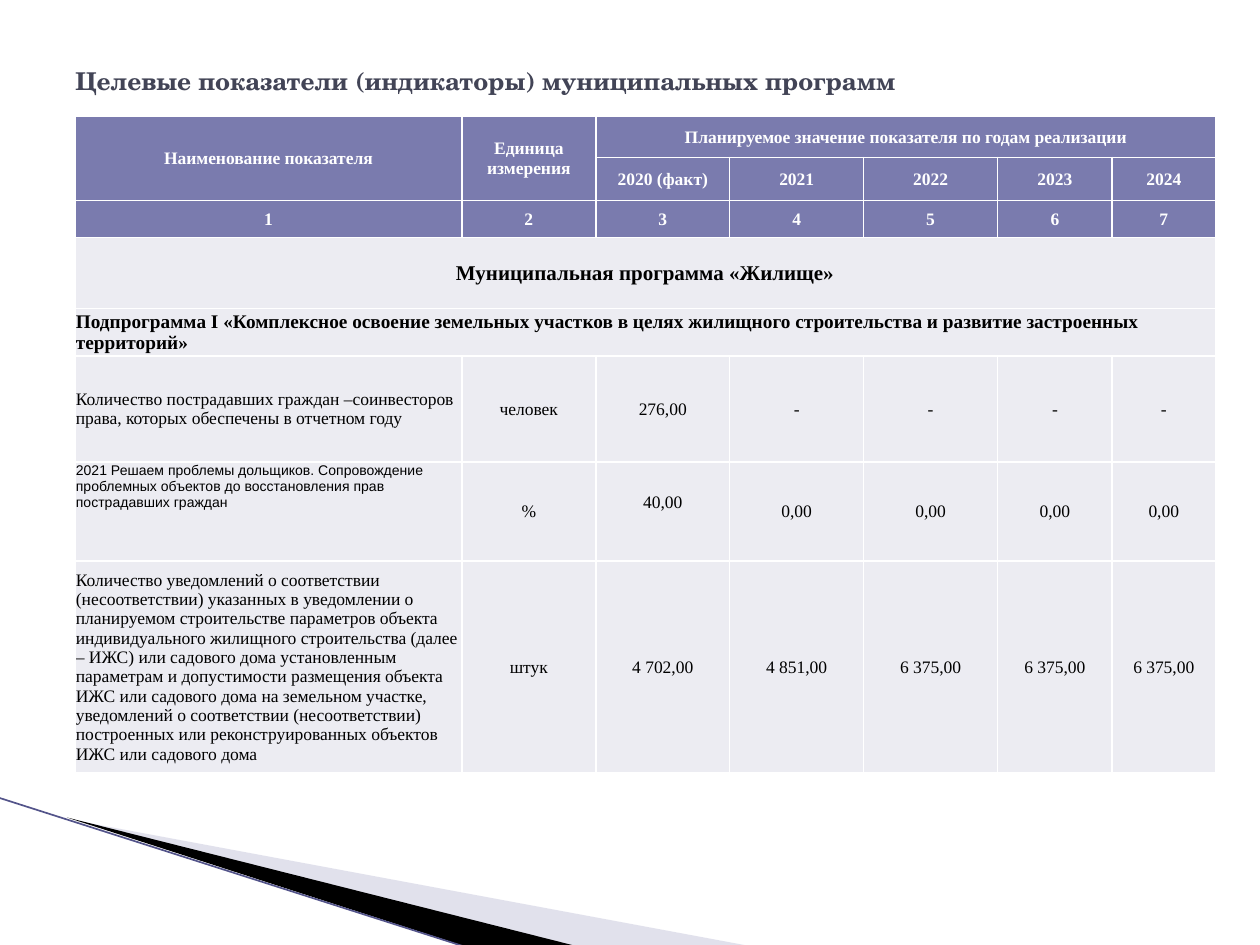
from lxml.etree import SubElement
from pptx import Presentation
from pptx.dml.color import RGBColor
from pptx.enum.shapes import MSO_CONNECTOR
from pptx.enum.text import MSO_ANCHOR, PP_ALIGN
from pptx.oxml import parse_xml
from pptx.oxml.ns import nsdecls, qn
from pptx.util import Cm, Pt


def rgb(value):
    return RGBColor.from_string(value)


def write(tf, text, size, color, bold, font="Times New Roman", align=PP_ALIGN.LEFT):
    p = tf.paragraphs[0]
    p.alignment = align
    r = p.add_run()
    r.text = text
    r.font.name = font
    r.font.size = Pt(size)
    r.font.bold = bold
    r.font.color.rgb = rgb(color)


prs = Presentation()
prs.slide_width, prs.slide_height = Cm(25.4), Cm(19.05)
s = prs.slides.add_slide(prs.slide_layouts[6])

wedges = [
    ([(1.4, 16.52), (15.11, 19.07), (11.58, 19.07)], "B6B6D1", 40),
    ([(1.35, 16.48), (11.61, 19.07), (9.45, 19.1)], "000000", 100),
]
for points, color, opacity in wedges:
    start, *rest = [(Cm(x), Cm(y)) for x, y in points]
    fb = s.shapes.build_freeform(*start)
    fb.add_line_segments(rest, close=True)
    sp = fb.convert_to_shape()
    sp.shadow.inherit = False
    sp.line.fill.background()
    sp.fill.solid()
    sp.fill.fore_color.rgb = rgb(color)
    if opacity < 100:
        clr = sp.fill._xPr.find(qn("a:solidFill"))[0]
        SubElement(clr, qn("a:alpha"), val=str(opacity * 1000))

cxn = s.shapes.add_connector(MSO_CONNECTOR.STRAIGHT, Cm(-0.03), Cm(16.08), Cm(9.42), Cm(19.1))
cxn.line.width = Pt(0.95)
cxn.line.color.rgb = rgb("53548A")
SubElement(cxn._element.spPr, qn("a:effectLst"))

tb = s.shapes.add_textbox(Cm(1.27), Cm(0.76), Cm(22.86), Cm(1.75))
tf = tb.text_frame
tf.word_wrap = True
tf.vertical_anchor = MSO_ANCHOR.MIDDLE
write(tf, "Целевые показатели (индикаторы) муниципальных программ", 14, "424456", True, "TeX Gyre Schola")

rows = [
    ["Наименование показателя", "Единица измерения", "Планируемое значение показателя по годам реализации"],
    ["", "", "2020 (факт)", "2021", "2022", "2023", "2024"],
    ["1", "2", "3", "4", "5", "6", "7"],
    ["Муниципальная программа «Жилище»"],
    ["Подпрограмма I «Комплексное освоение земельных участков в целях жилищного строительства "
     "и развитие застроенных территорий»"],
    ["Количество пострадавших граждан –соинвесторов права, которых обеспечены в отчетном году",
     "человек", "276,00", "-", "-", "-", "-"],
    ["2021 Решаем проблемы дольщиков. Сопровождение проблемных объектов до восстановления "
     "прав пострадавших граждан", "%", "40,00", "0,00", "0,00", "0,00", "0,00"],
    ["Количество уведомлений о соответствии (несоответствии) указанных в уведомлении о планируемом "
     "строительстве параметров объекта индивидуального жилищного строительства (далее – ИЖС) или "
     "садового дома установленным параметрам и допустимости размещения объекта ИЖС или садового дома "
     "на земельном участке, уведомлений о соответствии (несоответствии) построенных или "
     "реконструированных объектов ИЖС или садового дома",
     "штук", "4 702,00", "4 851,00", "6 375,00", "6 375,00", "6 375,00"],
]
widths = [7.8, 2.7, 2.7, 2.7, 2.7, 2.31, 2.08]
heights = [0.83, 0.81, 0.75, 1.43, 0.93, 2.14, 2, 3.91]
sizes = {3: 12, 4: 11}

tbl = s.shapes.add_table(len(rows), len(widths), Cm(1.51), Cm(2.34), Cm(sum(widths)), Cm(sum(heights))).table
for column, width in zip(tbl.columns, widths):
    column.width = Cm(width)
for row, height in zip(tbl.rows, heights):
    row.height = Cm(height)

for i, texts in enumerate(rows):
    for j in range(len(widths)):
        cell = tbl.cell(i, j)
        cell.margin_left = cell.margin_right = cell.margin_top = Cm(0.02)
        cell.margin_bottom = 0
        cell.vertical_anchor = MSO_ANCHOR.MIDDLE
        for side in ("lnL", "lnR", "lnT", "lnB"):
            cell._tc.get_or_add_tcPr().append(parse_xml(
                f'<a:{side} {nsdecls("a")} w="12700"><a:solidFill><a:srgbClr val="FFFFFF"/></a:solidFill></a:{side}>'))
        cell.fill.solid()
        cell.fill.fore_color.rgb = rgb("7A7BAE" if i < 3 else "ECECF2")
        if j < len(texts) and texts[j]:
            small = (i, j) == (6, 0)
            write(cell.text_frame, texts[j], 8 if small else sizes.get(i, 10),
                  "FFFFFF" if i < 3 else "000000", i < 5,
                  "Arial" if small else "Times New Roman",
                  PP_ALIGN.LEFT if j == 0 and i > 3 else PP_ALIGN.CENTER)

tbl.cell(6, 0).vertical_anchor = MSO_ANCHOR.TOP
tbl.cell(6, 2).margin_bottom = Cm(0.4)
for top, left, bottom, right in [(0, 0, 1, 0), (0, 1, 1, 1), (0, 2, 0, 6), (3, 0, 3, 6), (4, 0, 4, 6)]:
    tbl.cell(top, left).merge(tbl.cell(bottom, right))

prs.save("out.pptx")
